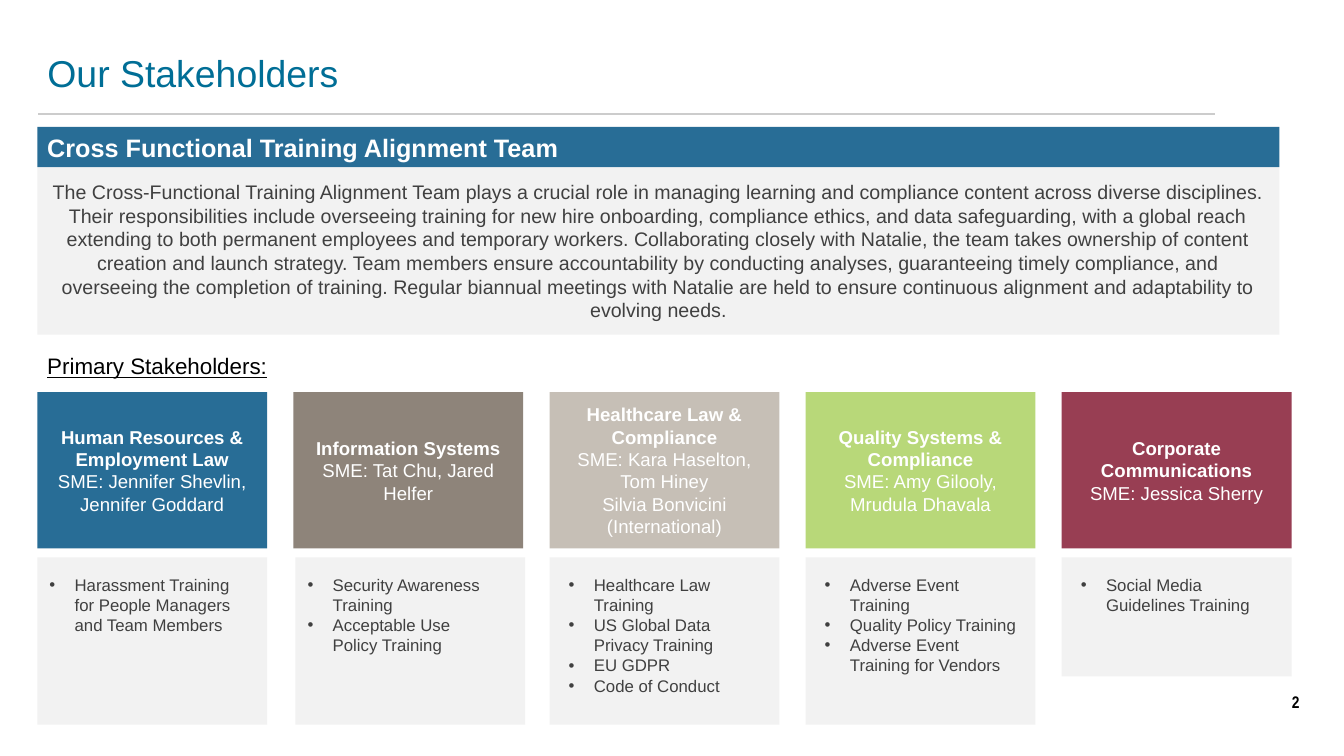
from lxml import etree
from pptx import Presentation
from pptx.dml.color import RGBColor
from pptx.enum.shapes import MSO_CONNECTOR as Connector, MSO_SHAPE as Shape
from pptx.enum.text import MSO_ANCHOR as Anchor, PP_ALIGN as Align
from pptx.oxml.ns import qn
from pptx.util import Inches, Pt

TITLE_BLUE = RGBColor(0x00, 0x6E, 0x96)
BLUE = RGBColor(0x28, 0x6D, 0x96)
BROWN = RGBColor(0x8E, 0x84, 0x7A)
SAND = RGBColor(0xC6, 0xBF, 0xB6)
GREEN = RGBColor(0xB8, 0xD8, 0x79)
WINE = RGBColor(0x98, 0x3E, 0x53)
PALE = RGBColor(0xF2, 0xF2, 0xF2)
RULE_GREY = RGBColor(0xCC, 0xCC, 0xCC)
DARK = RGBColor(0x40, 0x40, 0x40)
WHITE = RGBColor(0xFF, 0xFF, 0xFF)
BLACK = RGBColor(0x00, 0x00, 0x00)

# Grid, in inches
LEFT, FULL_WIDTH = 0.37, 12.32
COLUMN_STEP, COLUMN_WIDTH = 2.54, 2.28
HEADER_TOP, HEADER_HEIGHT = 3.89, 1.55
TRAINING_TOP, TRAINING_HEIGHT = 5.53, 1.66

MISSION = (
    "The Cross-Functional Training Alignment Team plays a crucial role in managing "
    "learning and compliance content across diverse disciplines. Their responsibilities "
    "include overseeing training for new hire onboarding, compliance ethics, and data "
    "safeguarding, with a global reach extending to both permanent employees and temporary "
    "workers. Collaborating closely with Natalie, the team takes ownership of content "
    "creation and launch strategy. Team members ensure accountability by conducting "
    "analyses, guaranteeing timely compliance, and overseeing the completion of training. "
    "Regular biannual meetings with Natalie are held to ensure continuous alignment and "
    "adaptability to evolving needs."
)

# Name, colour, contact lines, trainings, panel height, list inset, list width
STAKEHOLDERS = [
    ("Human Resources & Employment Law", BLUE,
     ["SME: Jennifer Shevlin, Jennifer Goddard"],
     ["Harassment Training for People Managers and Team Members"],
     TRAINING_HEIGHT, 0.12, 1.82),
    ("Information Systems", BROWN,
     ["SME: Tat Chu, Jared Helfer"],
     ["Security Awareness Training", "Acceptable Use Policy Training"],
     TRAINING_HEIGHT, 0.14, 1.82),
    ("Healthcare Law & Compliance", SAND,
     ["SME: Kara Haselton,", "Tom Hiney", "Silvia Bonvicini (International)"],
     ["Healthcare Law Training", "US Global Data Privacy Training", "EU GDPR",
      "Code of Conduct"],
     TRAINING_HEIGHT, 0.19, 1.96),
    ("Quality Systems & Compliance", GREEN,
     ["SME: Amy Gilooly,", "Mrudula Dhavala"],
     ["Adverse Event Training", "Quality Policy Training",
      "Adverse Event Training for Vendors"],
     TRAINING_HEIGHT, 0.19, 1.96),
    ("Corporate Communications", WINE,
     ["SME: Jessica Sherry"],
     ["Social Media Guidelines Training"],
     1.18, 0.19, 1.96),
]


def add_box(left, top, width, height, fill=None):
    """Add a filled rectangle, or a plain text box when no fill is given."""
    area = [Inches(length) for length in (left, top, width, height)]
    if fill is None:
        box = page.shapes.add_textbox(*area)
    else:
        box = page.shapes.add_shape(Shape.RECTANGLE, *area)
        box.shadow.inherit = False
        box.fill.solid()
        box.fill.fore_color.rgb = fill
        box.line.fill.background()
    box.text_frame.word_wrap = True
    box.text_frame.vertical_anchor = Anchor.MIDDLE
    return box


def write(box, lines, size, color, align=Align.LEFT, **formats):
    """Write one paragraph per line; formats are further font attributes."""
    frame = box.text_frame
    frame.text = "\n".join(lines)
    for para in frame.paragraphs:
        para.alignment = align
        font = para.runs[0].font
        font.color.rgb = color
        for name, value in {"name": "Arial", "size": Pt(size), **formats}.items():
            setattr(font, name, value)
    return frame


deck = Presentation()
deck.slide_width, deck.slide_height = Inches(13.33), Inches(7.5)
page = deck.slides.add_slide(deck.slide_layouts[5])

# Title and rule
title = page.shapes.title
title.left, title.top = Inches(LEFT), Inches(0.17)
title.width, title.height = Inches(11.67), Inches(0.82)
write(title, ["Our Stakeholders"], 26.7, TITLE_BLUE).vertical_anchor = Anchor.BOTTOM

rule = page.shapes.add_connector(
    Connector.STRAIGHT, Inches(0.38), Inches(1.13), Inches(12.05), Inches(1.13))
rule.line.color.rgb = RULE_GREY
rule.line.width = Pt(1)
etree.SubElement(rule.element.spPr, qn("a:effectLst"))

# Alignment team
write(add_box(LEFT, 1.66, FULL_WIDTH, 1.66, PALE), [MISSION], 14, DARK, Align.CENTER)
write(add_box(LEFT, 1.26, FULL_WIDTH, 0.4, BLUE),
      ["Cross Functional Training Alignment Team"], 18, WHITE, bold=True)

# Stakeholder columns
write(add_box(LEFT, 3.43, FULL_WIDTH, 0.4), ["Primary Stakeholders:"], 16, BLACK,
      underline=True)

for column, (name, color, contacts, trainings, height, inset, width) in enumerate(STAKEHOLDERS):
    left = LEFT + column * COLUMN_STEP
    header = add_box(left, HEADER_TOP, COLUMN_WIDTH, HEADER_HEIGHT, color)
    frame = write(header, [name, *contacts], 13.3, WHITE, Align.CENTER)
    frame.paragraphs[0].runs[0].font.bold = True

    panel_left = left + (0.02 if name == "Information Systems" else 0)
    add_box(panel_left, TRAINING_TOP, COLUMN_WIDTH, height, PALE)
    training_list = add_box(left + inset, 5.7, width, 0.2 * len(trainings) + 0.41)
    frame = write(training_list, trainings, 12, DARK)
    frame.vertical_anchor = Anchor.TOP
    for side in ("left", "top", "right", "bottom"):
        setattr(frame, f"margin_{side}", 0)
    for para in frame.paragraphs:
        properties = para._p.get_or_add_pPr()
        properties.set("marL", str(Inches(0.25)))
        properties.set("indent", str(Inches(-0.25)))
        etree.SubElement(properties, qn("a:buFont"), typeface="Arial")
        etree.SubElement(properties, qn("a:buChar"), char="•")

# Page number
write(add_box(12.6, 6.76, 0.5, 0.4), ["2"], 12, BLACK, Align.CENTER,
      name="Arial Narrow", bold=True)

deck.save("out.pptx")
